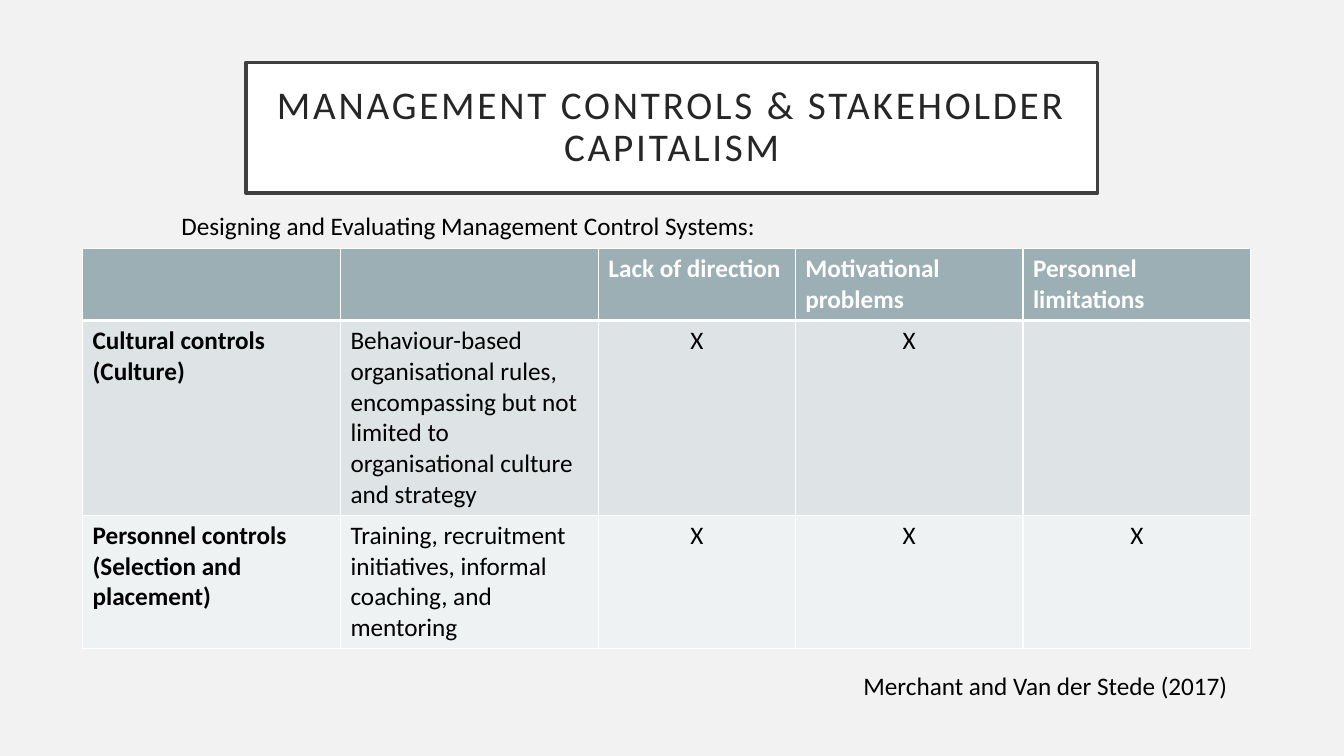
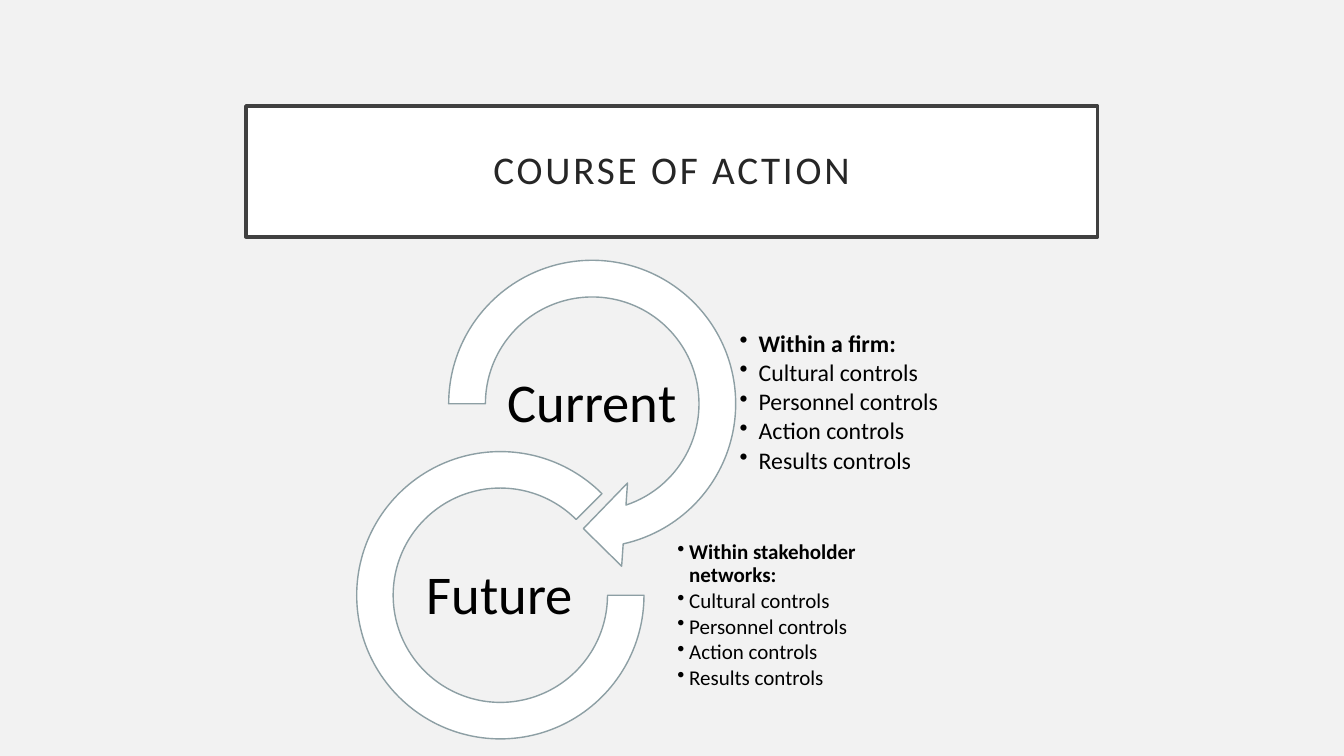
"""Build two slides on management controls and stakeholder capitalism."""
from lxml import etree
from pptx import Presentation
from pptx import util as u
from pptx.dml.color import RGBColor
from pptx.enum import shapes, text
from pptx.oxml.ns import qn

COLOURS = {
    "page": "F2F2F2", "white": "FFFFFF", "black": "000000",
    "title": "262626", "frame": "404040", "outline": "8D9FA4",
    "header": "9BAFB5", "band": "DEE3E5", "light": "EFF2F3",
}
FONT = "Calibri"
LEFT, CENTER = text.PP_ALIGN.LEFT, text.PP_ALIGN.CENTER
TOP, MIDDLE = text.MSO_ANCHOR.TOP, text.MSO_ANCHOR.MIDDLE
CONTROLS = ["Cultural controls", "Personnel controls", "Action controls", "Results controls"]


class Deck:
    """Hold the shared style and the slide being built."""

    def __init__(self):
        self.prs = Presentation()
        self.prs.slide_width, self.prs.slide_height = u.Cm(33.87), u.Cm(19.05)
        self.slide = None

    def colour(self, name):
        """Return a named colour."""
        return RGBColor.from_string(COLOURS[name])

    def paint(self, shape, fill, line, width):
        """Give a shape its fill and outline."""
        shape.fill.solid()
        shape.fill.fore_color.rgb = self.colour(fill)
        shape.line.color.rgb = self.colour(line)
        shape.line.width = u.Pt(width)

    def frame(self, shape, inset, anchor):
        """Set wrapping, anchor and equal or default insets of a text frame."""
        frame = shape.text_frame
        frame.word_wrap = True
        frame.auto_size = text.MSO_AUTO_SIZE.NONE
        frame.vertical_anchor = anchor
        if inset is not None:
            frame.margin_left = frame.margin_right = u.Cm(inset)
            frame.margin_top = frame.margin_bottom = u.Cm(inset)
        return frame

    def add_lines(self, frame, lines, size, colour="black", bold=False, align=LEFT, spacing=None):
        """Add one paragraph per line and return the runs."""
        runs = []
        for index, line in enumerate(lines):
            paragraph = frame.add_paragraph() if index else frame.paragraphs[0]
            paragraph.alignment = align
            paragraph.line_spacing = spacing
            run = paragraph.add_run()
            run.text = line
            run.font.name, run.font.size, run.font.bold = FONT, u.Pt(size), bold
            run.font.color.rgb = self.colour(colour)
            runs.append(run)
        return runs

    def new_slide(self, heading, top):
        """Start a slide with a framed, letter-spaced title."""
        self.slide = self.prs.slides.add_slide(self.prs.slide_layouts[5])
        self.slide.background.fill.solid()
        self.slide.background.fill.fore_color.rgb = self.colour("page")
        title = self.slide.shapes.title
        title.left, title.top = u.Cm(6.2), u.Cm(top)
        title.width, title.height = u.Cm(21.46), u.Cm(3.3)
        self.paint(title, "white", "frame", 2.5)
        frame = self.frame(title, 0.51, MIDDLE)
        for run in self.add_lines(frame, [heading], 28, "title", align=CENTER, spacing=0.9):
            run._r.get_or_add_rPr().set("spc", "200")

    def label(self, box, line, size=18, inset=None, anchor=TOP, **style):
        """Add a one-paragraph text box."""
        holder = self.slide.shapes.add_textbox(*map(u.Cm, box))
        self.add_lines(self.frame(holder, inset, anchor), [line], size, **style)

    def bullets(self, box, heading, items, size, indent, inset):
        """Add a bulleted list led by a bold heading."""
        holder = self.slide.shapes.add_textbox(*map(u.Cm, box))
        frame = self.frame(holder, inset, MIDDLE)
        runs = self.add_lines(frame, [heading, *items], size, spacing=0.9)
        runs[0].font.bold = True
        for paragraph in frame.paragraphs:
            paragraph.space_after = u.Pt(round(size * 0.15, 2))
            props = paragraph._p.get_or_add_pPr()
            props.set("marL", str(u.Cm(indent)))
            props.set("indent", str(-u.Cm(indent)))
            etree.SubElement(props, qn("a:buChar")).set("char", "•")

    def ring(self, kind, box, adjustments):
        """Add an outlined curved shape."""
        shape = self.slide.shapes.add_shape(kind, *map(u.Cm, box))
        shape.shadow.inherit = False
        for index, value in enumerate(adjustments):
            shape.adjustments[index] = value
        self.paint(shape, "white", "outline", 1)

    def borders(self, cell, bottom):
        """Draw white lines around a cell."""
        props = cell._tc.get_or_add_tcPr()
        for side, width in (("L", 1), ("R", 1), ("T", 1), ("B", bottom)):
            line = etree.SubElement(props, qn(f"a:ln{side}"), w=str(u.Pt(width)))
            fill = etree.SubElement(line, qn("a:solidFill"))
            etree.SubElement(fill, qn("a:srgbClr"), val=COLOURS["white"])

    def table(self, left, top, widths, heights, rows):
        """Add a table with a header row, row bands and centred marks."""
        box = map(u.Cm, (left, top, sum(widths), sum(heights)))
        grid = self.slide.shapes.add_table(len(rows), len(widths), *box).table
        for column, width in zip(grid.columns, widths):
            column.width = u.Cm(width)
        for row, height in zip(grid.rows, heights):
            row.height = u.Cm(height)
        for r, row in enumerate(rows):
            for c, lines in enumerate(row):
                cell = grid.cell(r, c)
                self.borders(cell, 1 if r else 3)
                cell.fill.solid()
                cell.fill.fore_color.rgb = self.colour(("header", "band", "light")[r])
                self.add_lines(cell.text_frame, lines, 18, "black" if r else "white",
                               bold=r == 0 or c == 0, align=CENTER if r and c > 1 else LEFT)


def controls_slide(deck):
    """Show which control problems each kind of control addresses."""
    deck.new_slide("MANAGEMENT CONTROLS & STAKEHOLDER CAPITALISM", 1.57)
    deck.label((4.32, 5.18, 25.22, 1.1), "Designing and Evaluating Management Control Systems:")
    mark, none = ["X"], []
    deck.table(2.08, 6.27, [6.5, 6.5, 4.96, 5.74, 5.74], [1.8, 4.91, 3.35], [
        [none, none, ["Lack of direction"], ["Motivational problems"], ["Personnel limitations"]],
        [["Cultural controls", "(Culture)"],
         ["Behaviour-based organisational rules, encompassing but not limited to "
          "organisational culture and strategy"], mark, mark, none],
        [["Personnel controls", "(Selection and placement)"],
         ["Training, recruitment initiatives, informal coaching, and mentoring"],
         mark, mark, mark],
    ])
    deck.label((21.51, 16.76, 10.52, 1.02), "Merchant and Van der Stede (2017)")


def action_slide(deck):
    """Show the step from current to future controls."""
    deck.new_slide("COURSE OF ACTION", 2.67)
    deck.ring(shapes.MSO_SHAPE.CIRCULAR_ARROW, (10.72, 5.97, 8.41, 8.41),
              (0.11, 11.42, 45, 108, 0.125))
    deck.ring(shapes.MSO_SHAPE.BLOCK_ARC, (8.99, 11.38, 7.24, 7.24), (0, 189, 0.127))
    for stage, left, top in (("Current", 12.57, 9.04), ("Future", 10.24, 13.87)):
        deck.label((left, top, 4.7, 2.34), stage, 39, 0.08, MIDDLE, align=CENTER, spacing=0.9)
    deck.bullets((18.59, 8.15, 6.12, 4.01), "Within a firm:", CONTROLS, 17, 0.48, 0.05)
    deck.bullets((17.04, 12.42, 5.87, 6.2), "Within stakeholder networks:", CONTROLS,
                 15, 0.3, 0.03)


def main():
    """Build and save the presentation."""
    deck = Deck()
    controls_slide(deck)
    action_slide(deck)
    deck.prs.save("out.pptx")


if __name__ == "__main__":
    main()
